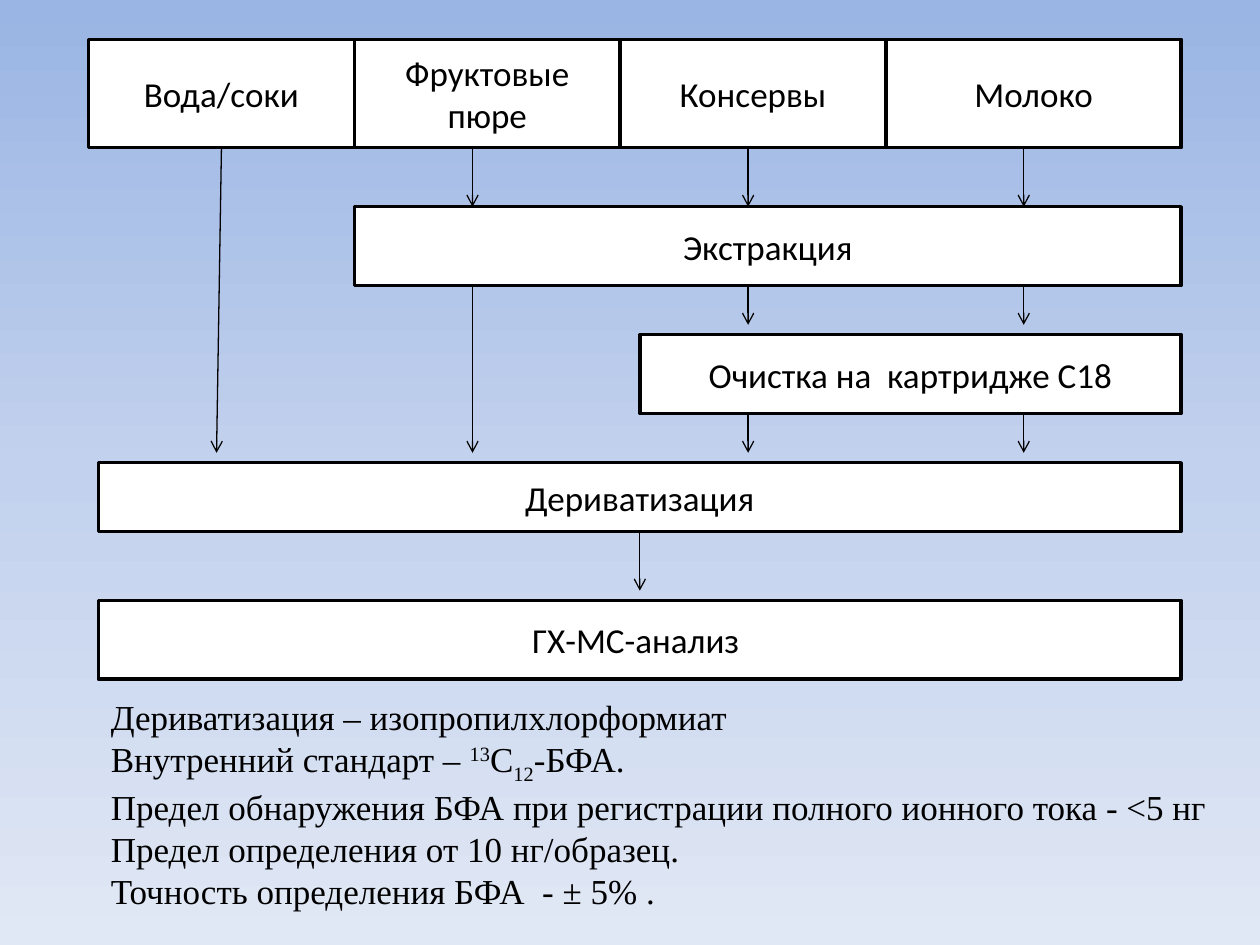
from copy import deepcopy

from lxml.etree import SubElement
from pptx import Presentation
from pptx.dml.color import RGBColor
from pptx.enum.shapes import MSO_CONNECTOR as Connector, MSO_SHAPE as Shape
from pptx.enum.text import MSO_ANCHOR as Anchor, MSO_AUTO_SIZE as AutoSize, PP_ALIGN as Align
from pptx.oxml.ns import qn
from pptx.util import Inches, Pt

BLACK, WHITE = "000000", "FFFFFF"


def paint(color_format, hex_color):
    color_format.rgb = RGBColor.from_string(hex_color)


def add_run(paragraph, text, font_name, baseline=0):
    """Add a 20 pt black run; baseline is a shift in percent."""
    run = paragraph.add_run()
    run.text = text
    run.font.name = font_name
    run.font.size = Pt(20)
    run.font.fill.solid()
    paint(run.font.fill.fore_color, BLACK)
    if baseline:
        run.font._element.set("baseline", str(baseline * 1000))


prs = Presentation()
prs.slide_width, prs.slide_height = Inches(10), Inches(7.5)
slide = prs.slides.add_slide(prs.slide_layouts[6])

# The slide is a grid of 128 columns by 96 rows
unit = prs.slide_width / 128

# Background: three-stop vertical gradient
background = slide.background.fill
background.gradient()
background.gradient_angle = 270
first_stop = background.gradient_stops[0]._gs
first_stop.addnext(deepcopy(first_stop))
gradient = [(0, "9AB5E4"), (0.5, "C2D1ED"), (1, "E1E8F5")]
for stop, (position, hex_color) in zip(background.gradient_stops, gradient):
    stop.position = position
    paint(stop.color, hex_color)

# Flow chart steps: text, left, top, right, bottom
samples = ["Вода/соки", "Фруктовые пюре", "Консервы", "Молоко"]
sample_edges = [9, 36, 63, 90, 120]
steps = [
    (sample, left, 4, right, 15)
    for sample, left, right in zip(samples, sample_edges, sample_edges[1:])
]
steps += [
    ("Экстракция", 36, 21, 120, 29),
    ("Очистка на  картридже С18", 65, 34, 120, 42),
    ("Дериватизация", 10, 47, 120, 54),
    ("ГХ-МС-анализ ", 10, 61, 120, 69),
]
flow = slide.shapes.add_group_shape().shapes
for text, left, top, right, bottom in steps:
    box = flow.add_shape(
        Shape.RECTANGLE,
        *(int(n * unit) for n in (left, top, right - left, bottom - top)),
    )
    box.shadow.inherit = False
    box.fill.solid()
    paint(box.fill.fore_color, WHITE)
    paint(box.line.color, BLACK)
    box.line.width = Pt(2)
    box.text_frame.word_wrap = True
    box.text_frame.vertical_anchor = Anchor.MIDDLE
    label = box.text_frame.paragraphs[0]
    label.alignment = Align.CENTER
    add_run(label, text, "Calibri")

# Arrows between the steps: start column and row, end column and row
puree, canned, milk = 48, 76, 104
arrows = [(22.5, 15, 22, 46)]
arrows += [(column, 15, column, 21) for column in (puree, canned, milk)]
arrows += [
    (column, start, column, end)
    for start, end in ((29, 33), (42, 46))
    for column in (canned, milk)
]
arrows += [(puree, 29, puree, 46), (65, 54, 65, 60)]
for ends in arrows:
    arrow = flow.add_connector(Connector.STRAIGHT, *(int(n * unit) for n in ends))
    paint(arrow.line.color, BLACK)
    arrow.line.width = Pt(0.75)
    SubElement(arrow.line._get_or_add_ln(), qn("a:tailEnd"), type="arrow")
    SubElement(arrow._element.spPr, qn("a:effectLst"))

# Method notes: each line is a list of (text, baseline) runs
notes = [
    [("Дериватизация – изопропилхлорформиат", 0)],
    [("Внутренний стандарт – ", 0), ("13", 30), ("С", 0), ("12", -25), ("-БФА.", 0)],
    [("Предел обнаружения БФА при регистрации полного ионного тока - <5 нг", 0)],
    [("Предел определения от 10 нг/образец.", 0)],
    [("Точность определения БФА  - ± 5% .", 0)],
]
method = slide.shapes.add_textbox(*(int(n * unit) for n in (10, 70, 114, 22.8))).text_frame
method.word_wrap = True
method.auto_size = AutoSize.SHAPE_TO_FIT_TEXT
for index, note in enumerate(notes):
    line = method.add_paragraph() if index else method.paragraphs[0]
    for text, baseline in note:
        add_run(line, text, "Times New Roman", baseline)

prs.save("out.pptx")
